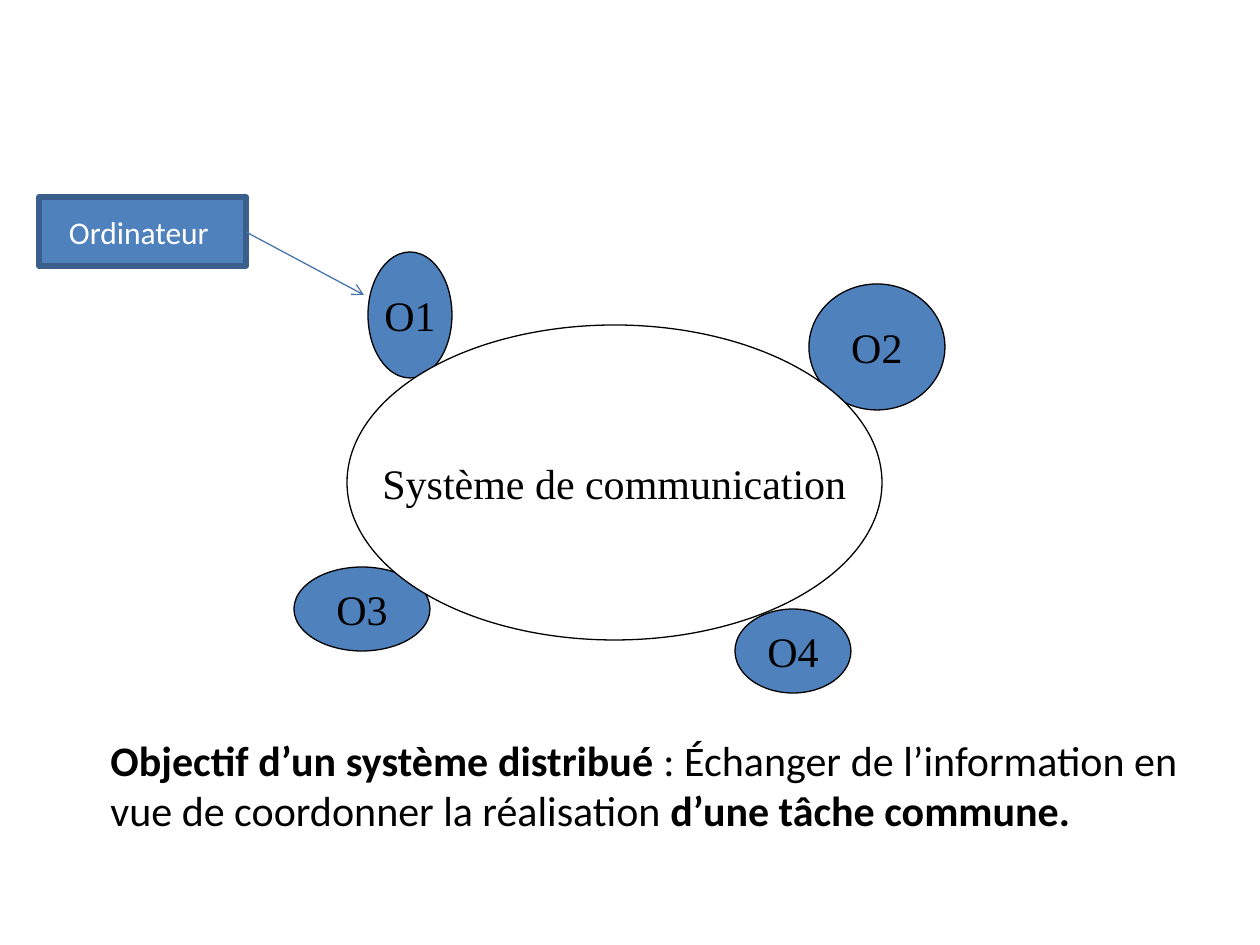
import pptx
import pptx.util
import pptx.dml.color
import pptx.enum.shapes
import pptx.enum.text
import pptx.oxml.ns
import lxml.etree

SHAPE = pptx.enum.shapes.MSO_SHAPE
ALIGN = pptx.enum.text.PP_ALIGN
BLUE = "4F81BD"
BLACK = "000000"
WHITE = "FFFFFF"


def px(*lengths):
    return [pptx.util.Emu(round(length * 914400 / 126)) for length in lengths]


def paint(color, hex_code):
    color.rgb = pptx.dml.color.RGBColor.from_string(hex_code)


presentation = pptx.Presentation()
presentation.slide_width, presentation.slide_height = px(1260, 945)
slide = presentation.slides.add_slide(presentation.slide_layouts[6])

objective = slide.shapes.add_textbox(*px(98, 728, 1092, 115)).text_frame
objective.word_wrap = True
sentence = objective.paragraphs[0]
sentence.alignment = ALIGN.JUSTIFY
sentence.font.name = "Calibri"
sentence.font.size = pptx.util.Pt(24)
paint(sentence.font.color, BLACK)
for words, bold in [
    ("Objectif d’un système distribué ", True),
    (": Échanger de l’information en vue de coordonner la réalisation ", False),
    ("d’une tâche commune.", True),
]:
    run = sentence.add_run()
    run.text = words
    run.font.bold = bold

ellipse = (SHAPE.OVAL, BLACK, 0.75, "Times New Roman", 24, BLACK, False)
label = (SHAPE.RECTANGLE, "3A5F8C", 3, "Calibri", 18, WHITE, True)
for words, box, fill, style in [
    ("O1", (368, 252, 84, 126), BLUE, ellipse),
    ("O2", (809, 284, 136, 126), BLUE, ellipse),
    ("O3", (294, 567, 136, 84), BLUE, ellipse),
    ("O4", (735, 609, 116, 84), BLUE, ellipse),
    ("Système de communication", (347, 325, 535, 315), WHITE, ellipse),
    ("Ordinateur ", (39, 197, 207, 69), BLUE, label),
]:
    outline, line_color, line_width, font_name, font_size, text_color, wrap = style
    node = slide.shapes.add_shape(outline, *px(*box))
    node.shadow.inherit = False
    node.fill.solid()
    paint(node.fill.fore_color, fill)
    paint(node.line.color, line_color)
    node.line.width = pptx.util.Pt(line_width)
    node.text_frame.word_wrap = wrap
    node.text_frame.vertical_anchor = pptx.enum.text.MSO_ANCHOR.MIDDLE
    caption = node.text_frame.paragraphs[0]
    caption.text = words
    caption.alignment = ALIGN.CENTER
    caption.font.name = font_name
    caption.font.size = pptx.util.Pt(font_size)
    paint(caption.font.color, text_color)

pointer = slide.shapes.add_connector(
    pptx.enum.shapes.MSO_CONNECTOR.STRAIGHT, *px(246, 232, 364, 295)
)
paint(pointer.line.color, "4875AC")
pointer.line.width = pptx.util.Pt(0.75)
qn = pptx.oxml.ns.qn
lxml.etree.SubElement(pointer.line._get_or_add_ln(), qn("a:tailEnd"), type="arrow")
lxml.etree.SubElement(pointer._element.spPr, qn("a:effectLst"))

presentation.save("out.pptx")
